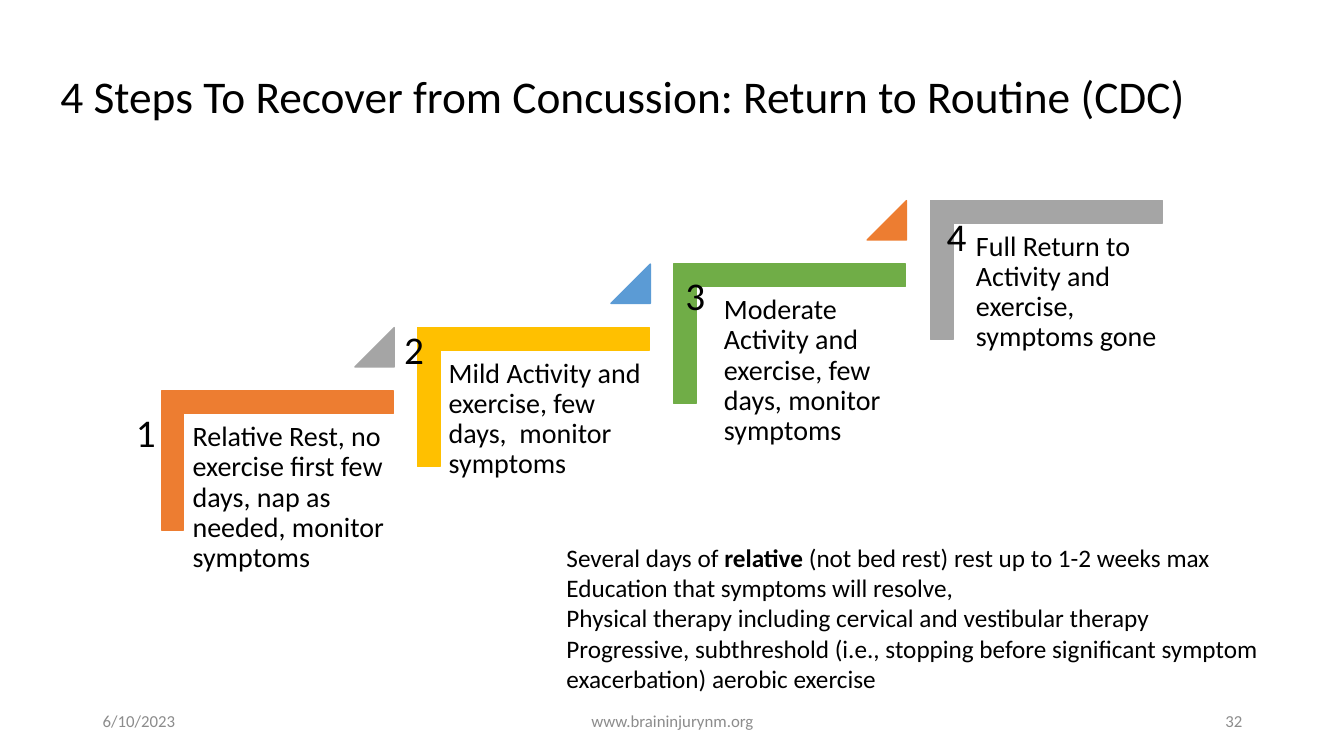
from dataclasses import dataclass

from pptx import Presentation
from pptx.dml.color import RGBColor
from pptx.enum.shapes import MSO_SHAPE
from pptx.enum.text import MSO_ANCHOR, PP_ALIGN
from pptx.util import Pt

PX = 9144


@dataclass(frozen=True)
class Theme:
    font: str = "Calibri"
    ink: str = "000000"
    muted: str = "8C8C8C"
    orange: str = "ED7D31"
    gold: str = "FFC000"
    green: str = "70AD47"
    gray: str = "A5A5A5"
    blue: str = "5B9BD5"
    title: float = 32.4
    number: int = 28
    step: int = 20
    notes: int = 18
    footer: int = 12


class SlideBuilder:
    def __init__(self, deck, theme):
        self.theme = theme
        self.page = deck.slides.add_slide(deck.slide_layouts[6])

    def text(self, frame, lines, size, color=None, align=PP_ALIGN.LEFT,
             anchor=MSO_ANCHOR.TOP, spacing=1.0, inset=(10, 5), bold=None):
        box = self.page.shapes.add_textbox(*(value * PX for value in frame))
        body = box.text_frame
        body.word_wrap = True
        body.vertical_anchor = anchor
        body.margin_left = body.margin_right = inset[0] * PX
        body.margin_top = body.margin_bottom = inset[1] * PX
        for index, line in enumerate(lines):
            para = body.paragraphs[0] if index == 0 else body.add_paragraph()
            para.alignment = align
            para.line_spacing = spacing
            for piece in [line] if isinstance(line, str) else line:
                span = para.add_run()
                span.text = piece
                span.font.name = self.theme.font
                span.font.size = Pt(size)
                span.font.bold = piece == bold
                span.font.color.rgb = RGBColor.from_string(color or self.theme.ink)

    def shape(self, kind, frame, color, adjustments, rotation=0):
        shape = self.page.shapes.add_shape(kind, *(value * PX for value in frame))
        shape.shadow.inherit = False
        shape.rotation = rotation
        for index, value in enumerate(adjustments):
            shape.adjustments[index] = value
        shape.fill.solid()
        shape.fill.fore_color.rgb = RGBColor.from_string(color)
        shape.line.color.rgb = RGBColor.from_string(color)
        shape.line.width = Pt(1)

    def corner(self, left, top, color):
        self.shape(MSO_SHAPE.CORNER, (left, top, 138, 230), color, (0.161, 0.161), 90)

    def triangle(self, left, top, color):
        self.shape(MSO_SHAPE.ISOSCELES_TRIANGLE, (left, top, 39, 39), color, (1,))


def main():
    deck = Presentation()
    deck.slide_width, deck.slide_height = 1333 * PX, 750 * PX
    theme = Theme()
    slide = SlideBuilder(deck, theme)

    slide.text((50, 40, 1239, 117),
               ["4 Steps To Recover from Concussion: Return to Routine (CDC)"],
               theme.title, anchor=MSO_ANCHOR.MIDDLE, spacing=0.9)

    steps = [
        ("Relative Rest, no exercise first few days, nap as needed, monitor symptoms",
         theme.orange, theme.gray, 183, (125, 400)),
        ("Mild Activity and exercise, few days,  monitor symptoms",
         theme.gold, theme.blue, 437, (391, 318)),
        ("Moderate Activity and exercise, few days, monitor symptoms",
         theme.green, theme.orange, 710, (670, 264)),
        ("Full Return to Activity and exercise, symptoms gone",
         theme.gray, None, 960, (929, 206)),
    ]
    for index, (label, color, triangle_color, label_left, number_at) in enumerate(steps):
        left, top = 206 + index * 763 // 3, 342 - index * 63
        slide.corner(left, top, color)
        slide.text((label_left, top + 69, 208, 182), [label], theme.step,
                   spacing=0.9, inset=(8, 8))
        if triangle_color:
            slide.triangle(left + 146, top - 17, triangle_color)
        slide.text((*number_at, 40, 57), [str(index + 1)], theme.number)

    footers = [
        (92, 300, "6/10/2023", PP_ALIGN.LEFT),
        (442, 450, "www.braininjurynm.org", PP_ALIGN.CENTER),
        (942, 300, "32", PP_ALIGN.RIGHT),
    ]
    for left, width, label, align in footers:
        slide.text((left, 695, width, 40), [label], theme.footer, theme.muted,
                   align, MSO_ANCHOR.MIDDLE)

    slide.text((552, 533, 745, 162), [
        ("Several days of ", "relative", " (not bed rest) rest up to 1-2 weeks max"),
        "Education that symptoms will resolve,",
        "Physical therapy including cervical and vestibular therapy",
        "Progressive, subthreshold (i.e., stopping before significant symptom "
        "exacerbation) aerobic exercise",
    ], theme.notes, bold="relative")

    deck.save("out.pptx")


if __name__ == "__main__":
    main()
